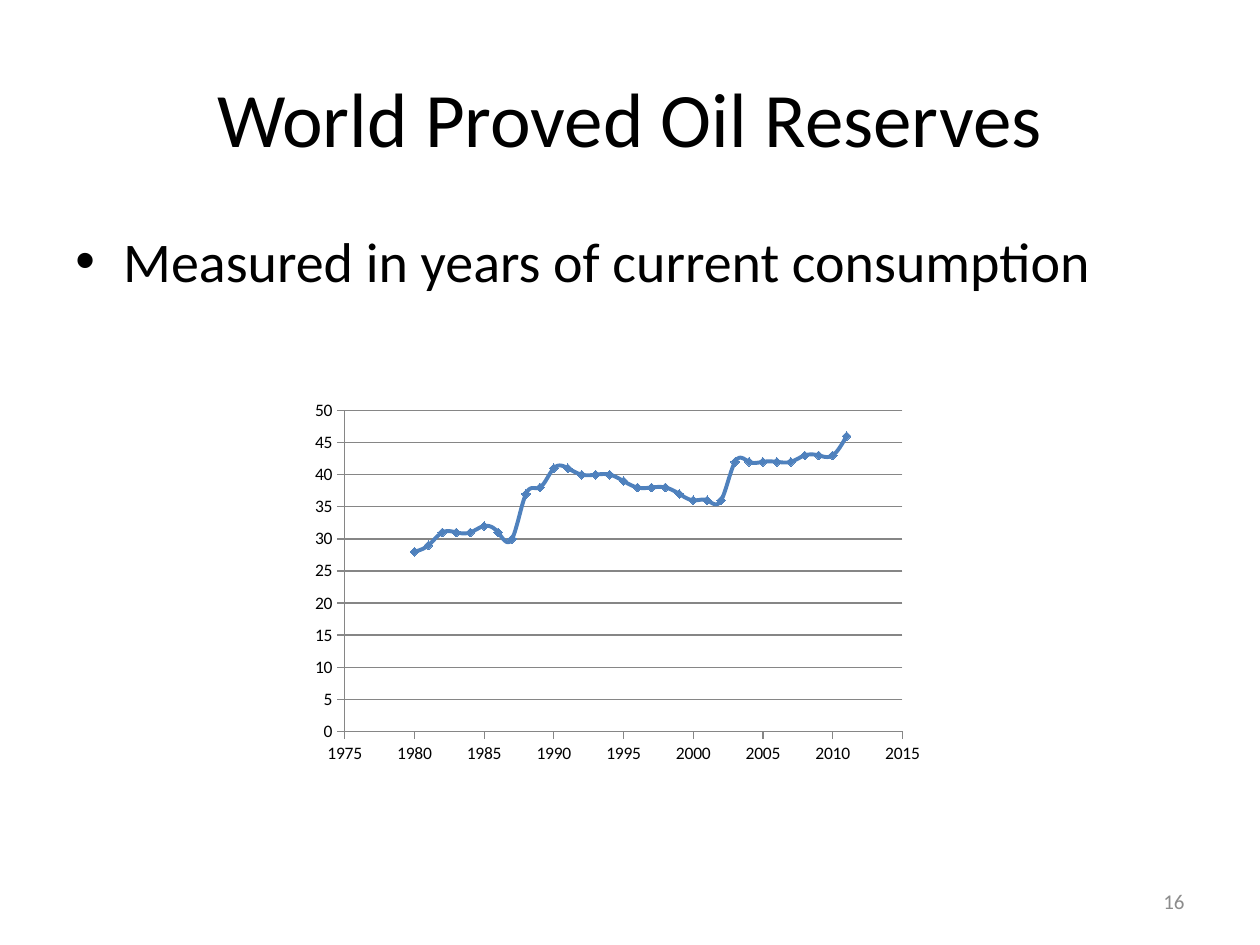
from dataclasses import dataclass

from lxml.etree import SubElement
from pptx import Presentation
from pptx.chart.data import XyChartData
from pptx.dml.color import RGBColor
from pptx.enum.chart import XL_CHART_TYPE, XL_MARKER_STYLE, XL_TICK_MARK
from pptx.enum.text import MSO_ANCHOR, PP_ALIGN
from pptx.oxml.ns import qn
from pptx.util import Inches, Pt


@dataclass(frozen=True)
class Theme:
    """Fonts, type sizes and colours of the slide."""
    font: str = "Calibri"
    title_size: int = 44
    body_size: int = 32
    number_size: int = 12
    chart_size: int = 10
    text: RGBColor = RGBColor(0, 0, 0)
    muted: RGBColor = RGBColor(0x8C, 0x8C, 0x8C)
    axis: RGBColor = RGBColor(0x86, 0x86, 0x86)
    series: RGBColor = RGBColor(0x4F, 0x81, 0xBD)


THEME = Theme()
FIRST_YEAR = 1980
RESERVE_YEARS = (
    28, 29, 31, 31, 31, 32, 31, 30,
    37, 38, 41, 41, 40, 40, 40, 39,
    38, 38, 38, 37, 36, 36, 36, 42,
    42, 42, 42, 42, 43, 43, 43, 46,
)


def style_font(font, size, color):
    """Apply the theme typeface with a size and colour."""
    font.name = THEME.font
    font.size = Pt(size)
    font.color.rgb = color


def add_text(slide, box, text, size, color, alignment, anchor=MSO_ANCHOR.MIDDLE):
    """Add a wrapped one-paragraph text box and return its paragraph."""
    shape = slide.shapes.add_textbox(*map(Inches, box))
    frame = shape.text_frame
    frame.word_wrap = True
    frame.vertical_anchor = anchor
    paragraph = frame.paragraphs[0]
    paragraph.text = text
    paragraph.alignment = alignment
    style_font(paragraph.font, size, color)
    return paragraph


def add_bullet(paragraph, indent):
    """Give a paragraph a round bullet with a hanging indent."""
    properties = paragraph._p.get_or_add_pPr()
    properties.set("marL", str(Inches(indent)))
    properties.set("indent", str(-Inches(indent)))
    bullet_font = SubElement(properties, qn("a:buFont"))
    bullet_font.set("typeface", "Arial")
    bullet = SubElement(properties, qn("a:buChar"))
    bullet.set("char", "•")
    properties.append(properties.find(qn("a:defRPr")))


def style_axis(axis, minimum, maximum, gridlines):
    """Set the scale, ticks and lines of a chart axis."""
    axis.minimum_scale = minimum
    axis.maximum_scale = maximum
    axis.major_unit = 5
    axis.major_tick_mark = XL_TICK_MARK.OUTSIDE
    axis.minor_tick_mark = XL_TICK_MARK.NONE
    axis.has_major_gridlines = gridlines
    lines = [axis.format.line]
    if gridlines:
        lines.append(axis.major_gridlines.format.line)
    for line in lines:
        line.color.rgb = THEME.axis
        line.width = Pt(0.75)


def add_reserves_chart(slide, box):
    """Add the smooth scatter chart of reserves by year."""
    data = XyChartData(number_format="General")
    reserves = data.add_series("Series 1")
    for year, value in enumerate(RESERVE_YEARS, FIRST_YEAR):
        reserves.add_data_point(year, value)
    chart = slide.shapes.add_chart(
        XL_CHART_TYPE.XY_SCATTER_SMOOTH, *map(Inches, box), data
    ).chart
    chart.has_title = False
    chart.has_legend = False
    style_font(chart.font, THEME.chart_size, THEME.text)
    style_axis(chart.category_axis, 1975, 2015, False)
    style_axis(chart.value_axis, 0, 50, True)
    plot = chart.plots[0]
    plot.vary_by_categories = False
    series = plot.series[0]
    series._element.find(qn("c:smooth")).set("val", "1")
    series.format.line.color.rgb = THEME.series
    series.format.line.width = Pt(2.25)
    marker = series.marker
    marker.style = XL_MARKER_STYLE.DIAMOND
    marker.size = 5
    marker.format.fill.solid()
    marker.format.fill.fore_color.rgb = THEME.series
    marker.format.line.color.rgb = THEME.series


def main():
    """Build and save the slide."""
    presentation = Presentation()
    presentation.slide_width = Inches(10)
    presentation.slide_height = Inches(7.5)
    slide = presentation.slides.add_slide(presentation.slide_layouts[6])
    add_text(slide, (0.5, 0.3, 9, 1.25), "World Proved Oil Reserves",
             THEME.title_size, THEME.text, PP_ALIGN.CENTER)
    body = add_text(slide, (0.5, 1.75, 9, 4.95), "Measured in years of current consumption",
                    THEME.body_size, THEME.text, PP_ALIGN.LEFT, MSO_ANCHOR.TOP)
    add_bullet(body, 0.38)
    add_text(slide, (7.17, 6.95, 2.33, 0.4), "16",
             THEME.number_size, THEME.muted, PP_ALIGN.RIGHT)
    add_reserves_chart(slide, (2.4, 3.12, 5, 3))
    presentation.save("out.pptx")


if __name__ == "__main__":
    main()
